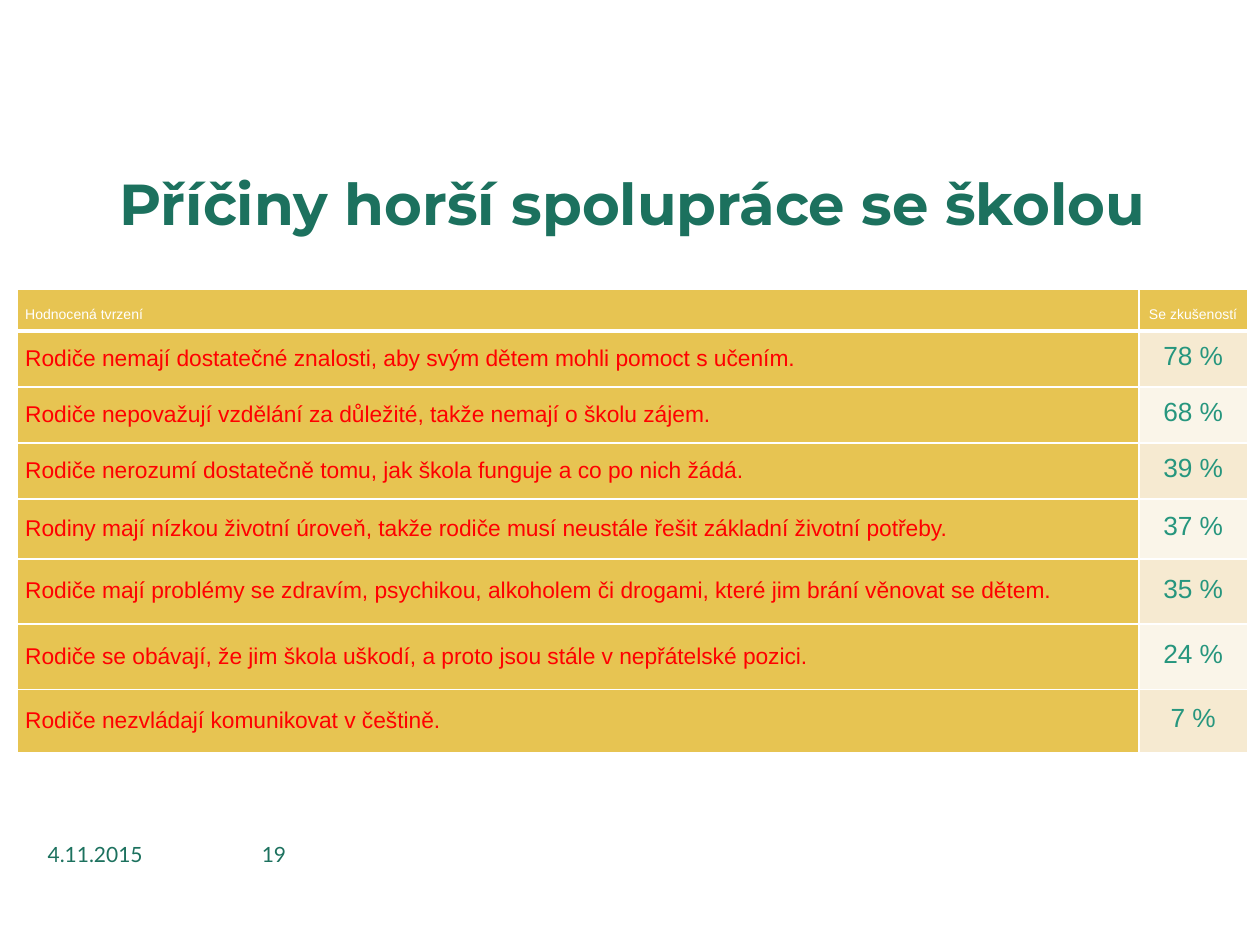
from dataclasses import dataclass

from lxml.etree import SubElement
from pptx import Presentation
from pptx.dml.color import RGBColor
from pptx.enum.text import MSO_ANCHOR, PP_ALIGN
from pptx.oxml.ns import qn
from pptx.util import Pt

GREEN = RGBColor(0x1C, 0x71, 0x5E)
TEAL = RGBColor(0x26, 0x96, 0x7E)
RED = RGBColor(0xFF, 0x00, 0x00)
WHITE = RGBColor(0xFF, 0xFF, 0xFF)
GOLD = RGBColor(0xE7, 0xC4, 0x52)
SAND = RGBColor(0xF6, 0xEA, 0xD1)
CREAM = RGBColor(0xFA, 0xF5, 0xE9)


@dataclass
class Style:
    font: str
    size: float
    color: RGBColor
    align: PP_ALIGN = PP_ALIGN.LEFT
    bold: bool = False


@dataclass
class Label:
    text: str
    left: float
    top: float
    width: float
    height: float
    style: Style


@dataclass
class Claim:
    text: str
    share: str
    height: float


LABELS = [
    Label("4.11.2015", 20.16, 479.5, 96.5, 17.3, Style("Lato", 12, GREEN)),
    Label("19", 115.9, 479.5, 54.7, 17.3, Style("Lato", 12, GREEN, PP_ALIGN.RIGHT)),
    Label("Příčiny horší spolupráce se školou", 10.1, 94.3, 702.7, 43.2,
          Style("Montserrat", 33, GREEN, PP_ALIGN.CENTER, True)),
]

HEADER = Claim("Hodnocená tvrzení", "Se zkušeností", 24.2)
CLAIMS = [
    Claim("Rodiče nemají dostatečné znalosti, aby svým dětem mohli pomoct s učením.", "78 %", 32),
    Claim("Rodiče nepovažují vzdělání za důležité, takže nemají o školu zájem.", "68 %", 32),
    Claim("Rodiče nerozumí dostatečně tomu, jak škola funguje a co po nich žádá.", "39 %", 32),
    Claim("Rodiny mají nízkou životní úroveň, takže rodiče musí neustále řešit základní životní potřeby.",
          "37 %", 34.4),
    Claim("Rodiče mají problémy se zdravím, psychikou, alkoholem či drogami, které jim brání věnovat se dětem.",
          "35 %", 37),
    Claim("Rodiče se obávají, že jim škola uškodí, a proto jsou stále v nepřátelské pozici.", "24 %", 37.4),
    Claim("Rodiče nezvládají komunikovat v češtině.", "7 %", 36),
]
COLUMN_WIDTHS = (640.8, 61.9)


def add_text(p, text: str, style: Style) -> None:
    p.alignment = style.align
    r = p.add_run()
    r.text = text
    r.font.name = style.font
    r.font.size = Pt(style.size)
    r.font.bold = style.bold
    r.font.color.rgb = style.color


def add_label(slide, label: Label) -> None:
    sp = slide.shapes.add_textbox(Pt(label.left), Pt(label.top), Pt(label.width), Pt(label.height))
    tf = sp.text_frame
    tf.word_wrap = True
    tf.vertical_anchor = MSO_ANCHOR.MIDDLE
    add_text(tf.paragraphs[0], label.text, label.style)


def set_borders(cell, widths: dict[str, float]) -> None:
    tcPr = cell._tc.get_or_add_tcPr()
    for side, width in widths.items():
        ln = SubElement(tcPr, qn(f"a:{side}"), w=str(Pt(width)))
        fill = SubElement(ln, qn("a:solidFill"))
        SubElement(fill, qn("a:srgbClr"), val=str(WHITE))


def fill_cell(cell, text: str, style: Style, fill: RGBColor, top: float, bottom: float) -> None:
    cell.margin_left = cell.margin_right = Pt(4.3)
    cell.margin_top = cell.margin_bottom = Pt(0)
    cell.vertical_anchor = MSO_ANCHOR.MIDDLE
    p = cell.text_frame.paragraphs[0]
    p.line_spacing = Pt(14)
    add_text(p, text, style)
    # Borders come before the fill in the cell properties
    set_borders(cell, {"lnL": 1, "lnR": 1, "lnT": top, "lnB": bottom})
    cell.fill.solid()
    cell.fill.fore_color.rgb = fill


def add_claims_table(slide) -> None:
    rows = [HEADER, *CLAIMS]
    height = sum(row.height for row in rows)
    table = slide.shapes.add_table(len(rows), len(COLUMN_WIDTHS), Pt(10.1), Pt(165),
                                   Pt(sum(COLUMN_WIDTHS)), Pt(height)).table
    for column, width in zip(table.columns, COLUMN_WIDTHS):
        column.width = Pt(width)
    for i, row in enumerate(rows):
        table.rows[i].height = Pt(row.height)
        if i == 0:
            styles = (Style("Arial", 8, WHITE), Style("Arial", 8, WHITE, PP_ALIGN.CENTER))
            fills = (GOLD, GOLD)
        else:
            styles = (Style("Arial", 13, RED), Style("Arial", 15, TEAL, PP_ALIGN.CENTER))
            fills = (GOLD, SAND if i % 2 else CREAM)
        top, bottom = (3 if i == 1 else 1), (3 if i == 0 else 1)
        for j, text in enumerate((row.text, row.share)):
            fill_cell(table.cell(i, j), text, styles[j], fills[j], top, bottom)


def main() -> None:
    prs = Presentation()
    prs.slide_width, prs.slide_height = Pt(720), Pt(540)
    slide = prs.slides.add_slide(prs.slide_layouts[6])
    # Date, slide number and title
    for label in LABELS:
        add_label(slide, label)
    # Claims with the share of respondents
    add_claims_table(slide)
    prs.save("out.pptx")


if __name__ == "__main__":
    main()
